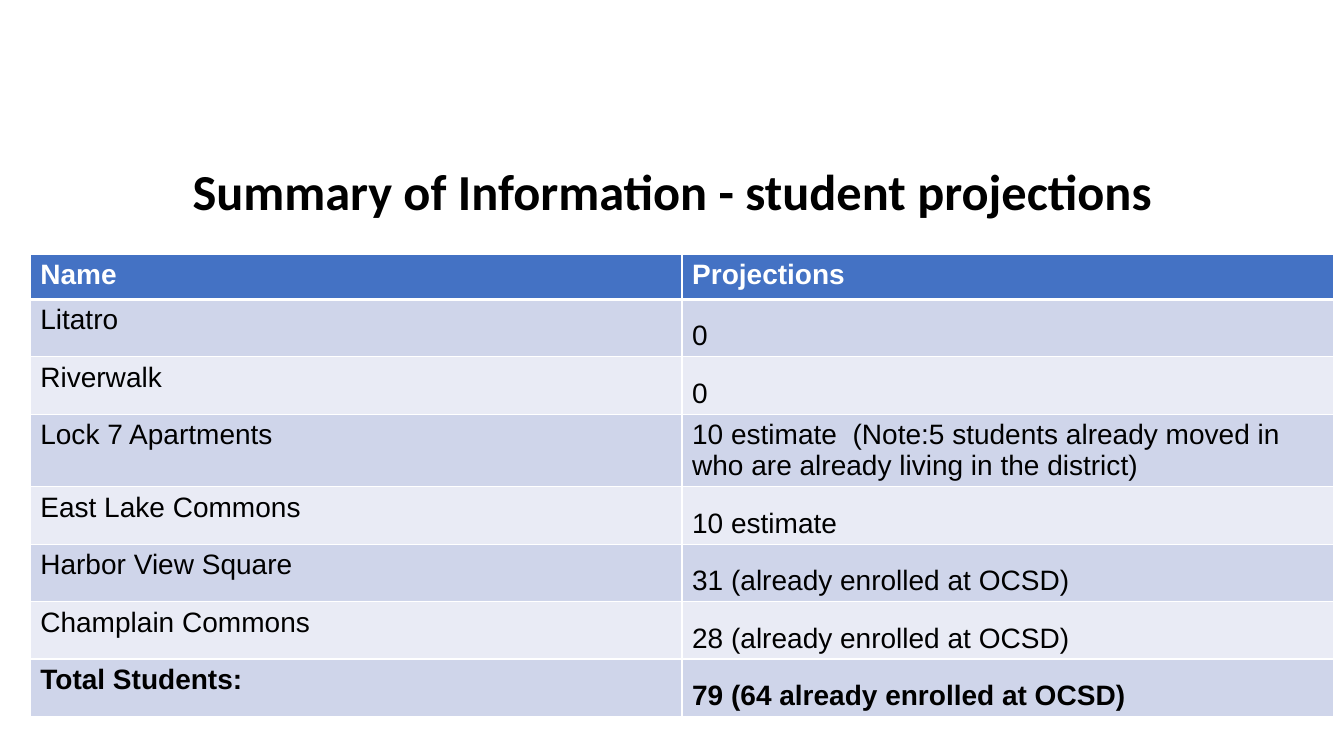
from lxml.etree import SubElement
from pptx import Presentation
from pptx.dml.color import RGBColor
from pptx.enum.text import MSO_ANCHOR as Anchor, PP_ALIGN as Align
from pptx.oxml.ns import qn
from pptx.util import Inches, Pt

BLACK = RGBColor(0x00, 0x00, 0x00)
WHITE = RGBColor(0xFF, 0xFF, 0xFF)
HEADER_BLUE = RGBColor(0x44, 0x72, 0xC4)
BAND_DARK = RGBColor(0xCF, 0xD5, 0xEA)
BAND_LIGHT = RGBColor(0xE9, 0xEB, 0xF5)

ROWS = [
    ("Name", "Projections"),
    ("Litatro", "0"),
    ("Riverwalk", "0"),
    ("Lock 7 Apartments",
     "10 estimate  (Note:5 students already moved in who are already living in the district)"),
    ("East Lake Commons", "10 estimate"),
    ("Harbor View Square", "31 (already enrolled at OCSD)"),
    ("Champlain Commons", "28 (already enrolled at OCSD)"),
    ("Total Students:", "79 (64 already enrolled at OCSD)"),
]


def add_run(paragraph, text, font_name, size, color, bold):
    run = paragraph.add_run()
    run.text = text
    run.font.name = font_name
    run.font.size = Pt(size)
    run.font.color.rgb = color
    run.font.bold = bold


def add_title(slide, left, top, width, height):
    title = slide.shapes.title
    title.left, title.top = Inches(left), Inches(top)
    title.width, title.height = Inches(width), Inches(height)
    frame = title.text_frame
    frame.word_wrap = True
    frame.vertical_anchor = Anchor.BOTTOM
    paragraph = frame.paragraphs[0]
    paragraph.alignment = Align.CENTER
    paragraph.line_spacing = 0.9
    add_run(paragraph, "Summary of Information - student projections",
            "Calibri", 36, BLACK, True)


def set_borders(cell, top_width, bottom_width):
    properties = cell._tc.get_or_add_tcPr()
    widths = {"a:lnL": 1, "a:lnR": 1, "a:lnT": top_width, "a:lnB": bottom_width}
    for tag, width in widths.items():
        line = SubElement(properties, qn(tag), w=str(Pt(width)))
        fill = SubElement(line, qn("a:solidFill"))
        SubElement(fill, qn("a:srgbClr"), val=str(WHITE))


def format_cell(cell, text, row, column):
    is_header = row == 0
    is_total = row == len(ROWS) - 1
    set_borders(cell, 3 if row == 1 else 1, 3 if is_header else 1)
    cell.fill.solid()
    band = BAND_DARK if row % 2 else BAND_LIGHT
    cell.fill.fore_color.rgb = HEADER_BLUE if is_header else band
    is_projection = column == 1 and not is_header
    cell.vertical_anchor = Anchor.BOTTOM if is_projection else Anchor.TOP
    add_run(cell.text_frame.paragraphs[0], text, "Arial", 20,
            WHITE if is_header else BLACK, is_header or is_total)


def add_projections_table(slide, left, top, width, header_height, row_height):
    height = header_height + row_height * (len(ROWS) - 1)
    frame = slide.shapes.add_table(len(ROWS), 2, Inches(left), Inches(top),
                                   Inches(width), Inches(height))
    table = frame.table
    for column in table.columns:
        column.width = Inches(width / 2)
    for row, texts in enumerate(ROWS):
        table.rows[row].height = Inches(row_height if row else header_height)
        for column, text in enumerate(texts):
            format_cell(table.cell(row, column), text, row, column)


def main():
    presentation = Presentation()
    presentation.slide_width = Inches(13.33)
    presentation.slide_height = Inches(7.5)
    slide = presentation.slides.add_slide(presentation.slide_layouts[5])
    add_title(slide, 0.92, 1.61, 11.5, 0.64)
    add_projections_table(slide, 0.3, 2.52, 12.93, 0.45, 0.57)
    presentation.save("out.pptx")


if __name__ == "__main__":
    main()
